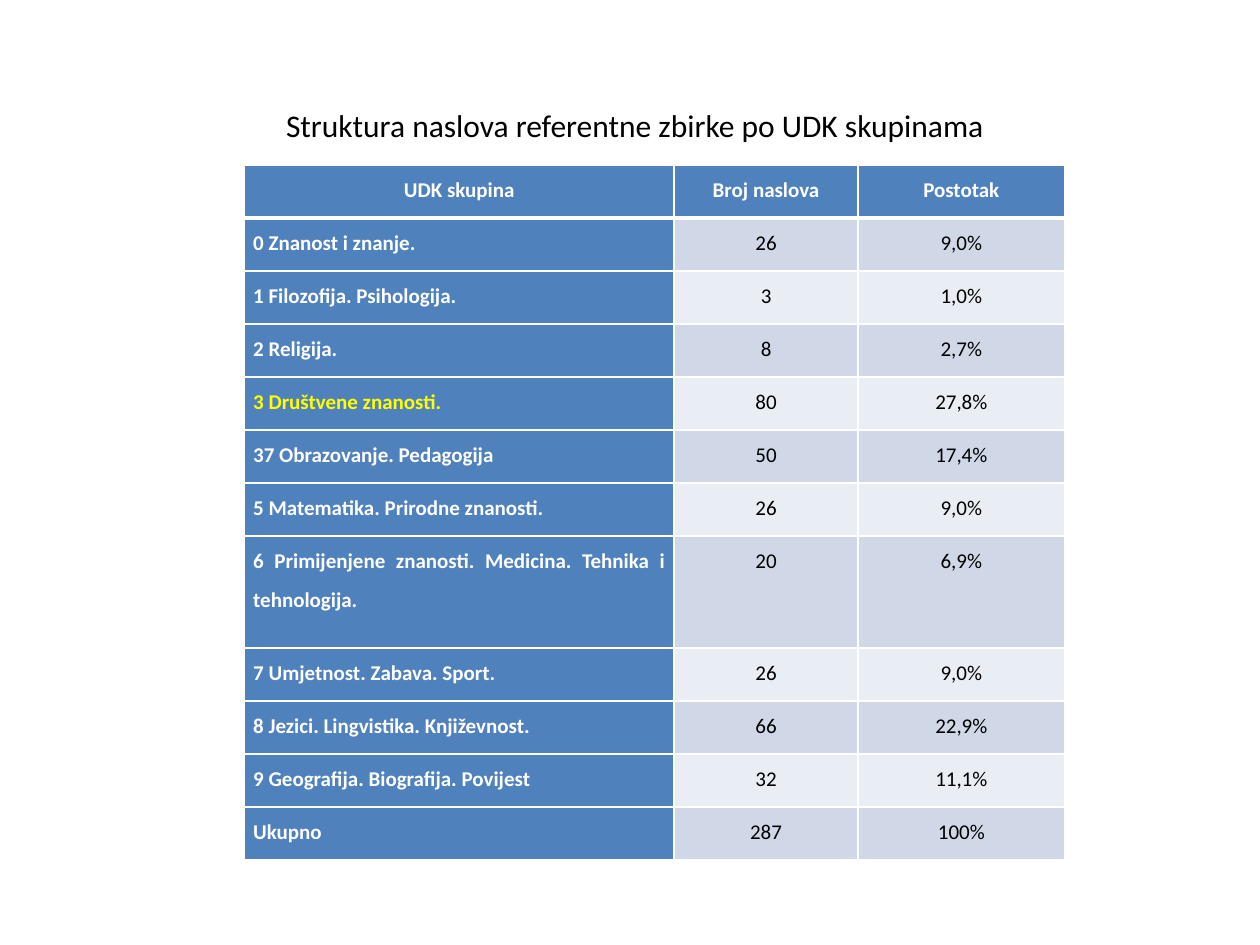
from collections import namedtuple
from dataclasses import dataclass

from lxml.etree import SubElement
from pptx import Presentation
from pptx.dml.color import RGBColor
from pptx.enum.text import MSO_ANCHOR, MSO_AUTO_SIZE, PP_ALIGN
from pptx.oxml.ns import qn
from pptx.util import Inches, Pt

Box = namedtuple("Box", "left top width height")


@dataclass(frozen=True)
class Theme:
    font: str = "Calibri"
    title_size: int = 18
    table_size: int = 12
    text: str = "000000"
    inverse: str = "FFFFFF"
    highlight: str = "FFFF00"
    accent: str = "4F81BD"
    bands: tuple = ("D0D8E8", "E9EDF4")
    rule: int = 1
    header_rule: int = 3


THEME = Theme()

# The slide is a grid of 100 columns by 75 rows
SLIDE_WIDTH, SLIDE_HEIGHT = Inches(10), Inches(7.5)
COLUMN, ROW = SLIDE_WIDTH / 100, SLIDE_HEIGHT / 75

TITLE = "Struktura naslova referentne zbirke po UDK skupinama"
HEADER = ("UDK skupina", "Broj naslova", "Postotak")
GROUPS = [
    ("0 Znanost i znanje.", "26", "9,0%"),
    ("1 Filozofija. Psihologija.", "3", "1,0%"),
    ("2 Religija.", "8", "2,7%"),
    ("3 Društvene znanosti.", "80", "27,8%"),
    ("37 Obrazovanje. Pedagogija", "50", "17,4%"),
    ("5 Matematika. Prirodne znanosti.", "26", "9,0%"),
    ("6 Primijenjene znanosti. Medicina. Tehnika i tehnologija.", "20", "6,9%"),
    ("7 Umjetnost. Zabava. Sport.", "26", "9,0%"),
    ("8 Jezici. Lingvistika. Književnost.", "66", "22,9%"),
    ("9 Geografija. Biografija. Povijest", "32", "11,1%"),
    ("Ukupno", "287", "100%"),
]
HIGHLIGHTED_ROW = 4
COLUMN_WEIGHTS = (3.41, 1.46, 1.64)
ROW_WEIGHTS = [0.89 if row == 7 else 0.42 for row in range(len(GROUPS) + 1)]


def grid_box(left, top, width, height):
    return Box(round(left * COLUMN), round(top * ROW),
               round(width * COLUMN), round(height * ROW))


def set_font(paragraph, size, color, bold=False):
    font = paragraph.font
    font.name, font.size, font.bold = THEME.font, Pt(size), bold
    font.color.rgb = RGBColor.from_string(color)


def set_borders(cell, top, bottom):
    properties = cell._tc.get_or_add_tcPr()
    widths = {"a:lnL": THEME.rule, "a:lnR": THEME.rule, "a:lnT": top, "a:lnB": bottom}
    for tag, width in widths.items():
        line = SubElement(properties, qn(tag), w=str(Pt(width)))
        fill = SubElement(line, qn("a:solidFill"))
        SubElement(fill, qn("a:srgbClr"), val=THEME.inverse)


def add_title(slide, box):
    title = slide.shapes.title
    title.left, title.top, title.width, title.height = box
    frame = title.text_frame
    frame.text = TITLE
    frame.word_wrap = True
    frame.auto_size = MSO_AUTO_SIZE.SHAPE_TO_FIT_TEXT
    frame.vertical_anchor = MSO_ANCHOR.TOP
    paragraph = frame.paragraphs[0]
    paragraph.alignment = PP_ALIGN.LEFT
    set_font(paragraph, THEME.title_size, THEME.text)


def format_cell(cell, text, row, column):
    is_header = row == 0
    is_label = is_header or column == 0

    # Borders, with a heavier rule under the header
    set_borders(cell,
                top=THEME.header_rule if row == 1 else THEME.rule,
                bottom=THEME.header_rule if is_header else THEME.rule)

    # Accent labels and alternating value bands
    cell.fill.solid()
    cell.fill.fore_color.rgb = RGBColor.from_string(
        THEME.accent if is_label else THEME.bands[(row - 1) % 2])

    # Text
    cell.margin_left = cell.margin_right = Inches(0.07)
    cell.margin_top = cell.margin_bottom = 0
    cell.text = text
    paragraph = cell.text_frame.paragraphs[0]
    paragraph.line_spacing = 1.5
    paragraph.alignment = (PP_ALIGN.JUSTIFY if column == 0 and not is_header
                           else PP_ALIGN.CENTER)
    color = THEME.inverse if is_label else THEME.text
    if row == HIGHLIGHTED_ROW and column == 0:
        color = THEME.highlight
    set_font(paragraph, THEME.table_size, color, bold=is_label)


def add_group_table(slide, box):
    records = [HEADER, *GROUPS]
    table = slide.shapes.add_table(len(records), len(HEADER), *box).table
    for column, weight in zip(table.columns, COLUMN_WEIGHTS):
        column.width = round(box.width * weight / sum(COLUMN_WEIGHTS))
    for row, weight in zip(table.rows, ROW_WEIGHTS):
        row.height = round(box.height * weight / sum(ROW_WEIGHTS))
    table.first_col = True
    for row, record in enumerate(records):
        for column, text in enumerate(record):
            format_cell(table.cell(row, column), text, row, column)


def main():
    presentation = Presentation()
    presentation.slide_width, presentation.slide_height = SLIDE_WIDTH, SLIDE_HEIGHT
    title_only = presentation.slide_layouts.get_by_name("Title Only")
    slide = presentation.slides.add_slide(title_only)
    add_title(slide, grid_box(21.7, 7.9, 60.6, 4))
    add_group_table(slide, grid_box(19.4, 13.1, 65.1, 55.2))
    presentation.save("out.pptx")


if __name__ == "__main__":
    main()
